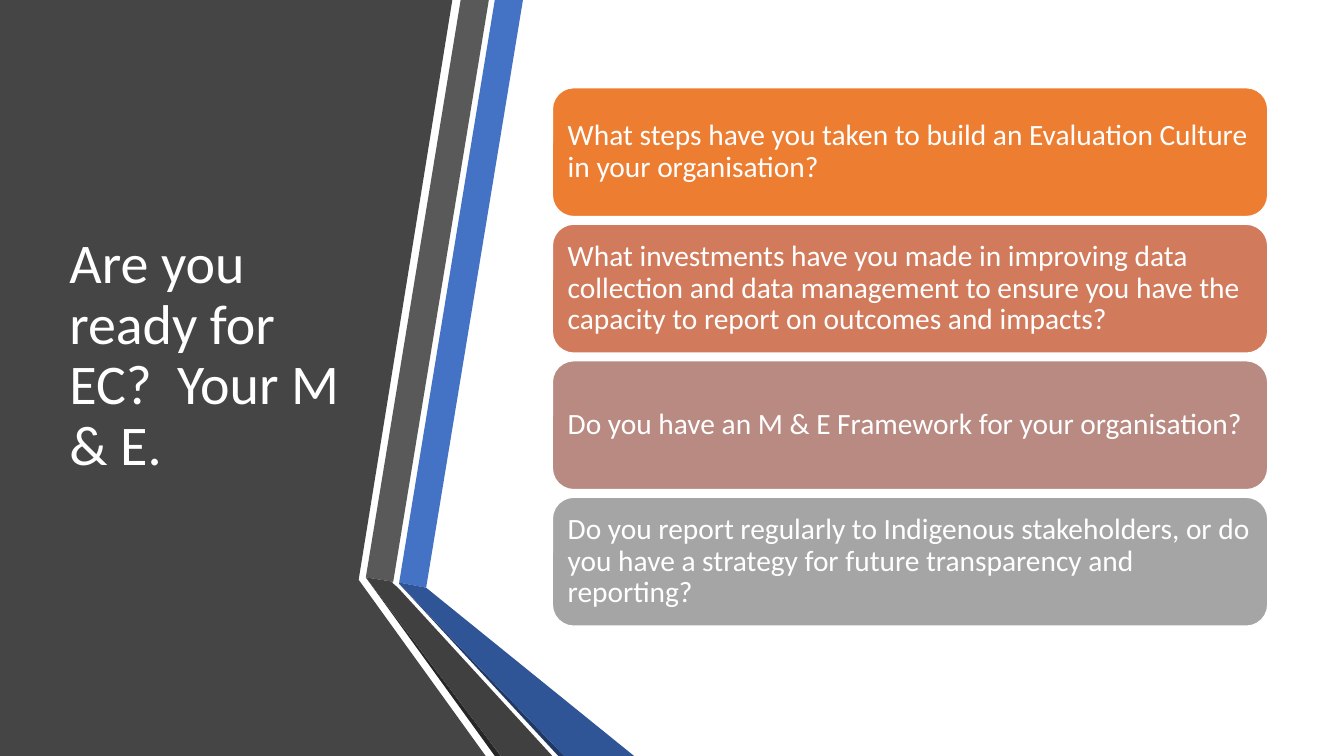
from pptx import Presentation
from pptx.dml.color import RGBColor
from pptx.enum.shapes import MSO_SHAPE
from pptx.enum.text import MSO_ANCHOR, PP_ALIGN
from pptx.util import Cm, Pt

ROUNDED = MSO_SHAPE.ROUNDED_RECTANGLE
MIDDLE = MSO_ANCHOR.MIDDLE
LEFT = PP_ALIGN.LEFT

WHITE = RGBColor(0xFF, 0xFF, 0xFF)
CHARCOAL = RGBColor(0x45, 0x45, 0x45)
BLUE = RGBColor(0x44, 0x72, 0xC4)
BLUE_DARK = RGBColor(0x2F, 0x55, 0x97)
BLUE_DARKEST = RGBColor(0x20, 0x38, 0x64)
GREY = RGBColor(0x59, 0x59, 0x59)
GREY_DARK = RGBColor(0x40, 0x40, 0x40)
GREY_DARKEST = RGBColor(0x26, 0x26, 0x26)
ORANGE = RGBColor(0xED, 0x7D, 0x31)
TERRACOTTA = RGBColor(0xD1, 0x7B, 0x5C)
DUSTY_ROSE = RGBColor(0xB9, 0x8A, 0x82)
SILVER = RGBColor(0xA5, 0xA5, 0xA5)
FONT = "Calibri"

# Content
HEADING = "Are you ready for EC?  Your M & E."
QUESTIONS = [
    ("What steps have you taken to build an Evaluation Culture in your organisation?", ORANGE),
    ("What investments have you made in improving data collection and data management "
     "to ensure you have the capacity to report on outcomes and impacts?", TERRACOTTA),
    ("Do you have an M & E Framework for your organisation?", DUSTY_ROSE),
    ("Do you report regularly to Indigenous stakeholders, or do you have a strategy "
     "for future transparency and reporting?", SILVER),
]

# Slide size and outlines of the folded ribbons, in cm, from back to front
WIDTH, HEIGHT = 33.87, 19.05
GREY_FOLD, BLUE_FOLD = (9.22, 14.55), (10.06, 14.71)
GREY_FOOT, BLUE_FOOT = (12.62, HEIGHT), (14.22, HEIGHT)
BLUE_CORNER = (10.74, 14.81)
OUTLINES = [
    (CHARCOAL, [(0, 0), (11.4, 0), (9.04, 14.61), (12.24, HEIGHT), (0, HEIGHT)]),
    (BLUE, [(10.06, 14.68), BLUE_CORNER, (13.18, 0), (12.47, 0)]),
    (GREY, [(12.32, 0), (11.61, 0), GREY_FOLD, (9.91, 14.66)]),
    (GREY_DARKEST, [GREY_FOLD, (12.47, HEIGHT), GREY_FOOT]),
    (BLUE_DARKEST, [BLUE_FOLD, (14.07, HEIGHT), BLUE_FOOT]),
    (BLUE_DARK, [BLUE_FOLD, BLUE_FOOT, (15.98, HEIGHT), BLUE_CORNER, (10.06, 14.68)]),
    (GREY_DARK, [(13.92, HEIGHT), (10.03, 14.81), (9.88, 14.68), (9.91, 14.66),
                 GREY_FOLD, GREY_FOOT]),
]

# Question boxes, in cm
BOX_LEFT, BOX_TOP, BOX_WIDTH, BOX_HEIGHT = 13.92, 2.21, 18.03, 3.25
BOX_PITCH = 3.44
BOX_INSET = Cm(0.23)


def write(shape, words, size):
    frame = shape.text_frame
    frame.word_wrap = True
    frame.vertical_anchor = MIDDLE
    paragraph = frame.paragraphs[0]
    paragraph.alignment = LEFT
    paragraph.line_spacing = 0.9
    run = paragraph.add_run()
    run.text = words
    run.font.name = FONT
    run.font.size = Pt(size)
    run.font.color.rgb = WHITE
    return frame


def paint(shape, colour):
    shape.shadow.inherit = False
    shape.fill.solid()
    shape.fill.fore_color.rgb = colour


deck = Presentation()
deck.slide_width, deck.slide_height = Cm(WIDTH), Cm(HEIGHT)
slide = deck.slides.add_slide(deck.slide_layouts[6])
shapes = slide.shapes

# Dark panel and ribbons
for colour, corners in OUTLINES:
    start, *others = [(Cm(x), Cm(y)) for x, y in corners]
    builder = shapes.build_freeform(*start)
    builder.add_line_segments(others, close=True)
    ribbon = builder.convert_to_shape()
    paint(ribbon, colour)
    ribbon.line.fill.background()

# Heading
heading = shapes.add_textbox(Cm(1.5), Cm(1.9), Cm(7.72), Cm(14.17))
write(heading, HEADING, 40)

# Questions
for row, (question, colour) in enumerate(QUESTIONS):
    box = shapes.add_shape(ROUNDED, Cm(BOX_LEFT), Cm(BOX_TOP + row * BOX_PITCH),
                           Cm(BOX_WIDTH), Cm(BOX_HEIGHT))
    paint(box, colour)
    box.line.color.rgb = WHITE
    box.line.width = Pt(1)
    frame = write(box, question, 21)
    frame.margin_left = frame.margin_right = BOX_INSET
    frame.margin_top = frame.margin_bottom = BOX_INSET

deck.save("out.pptx")
